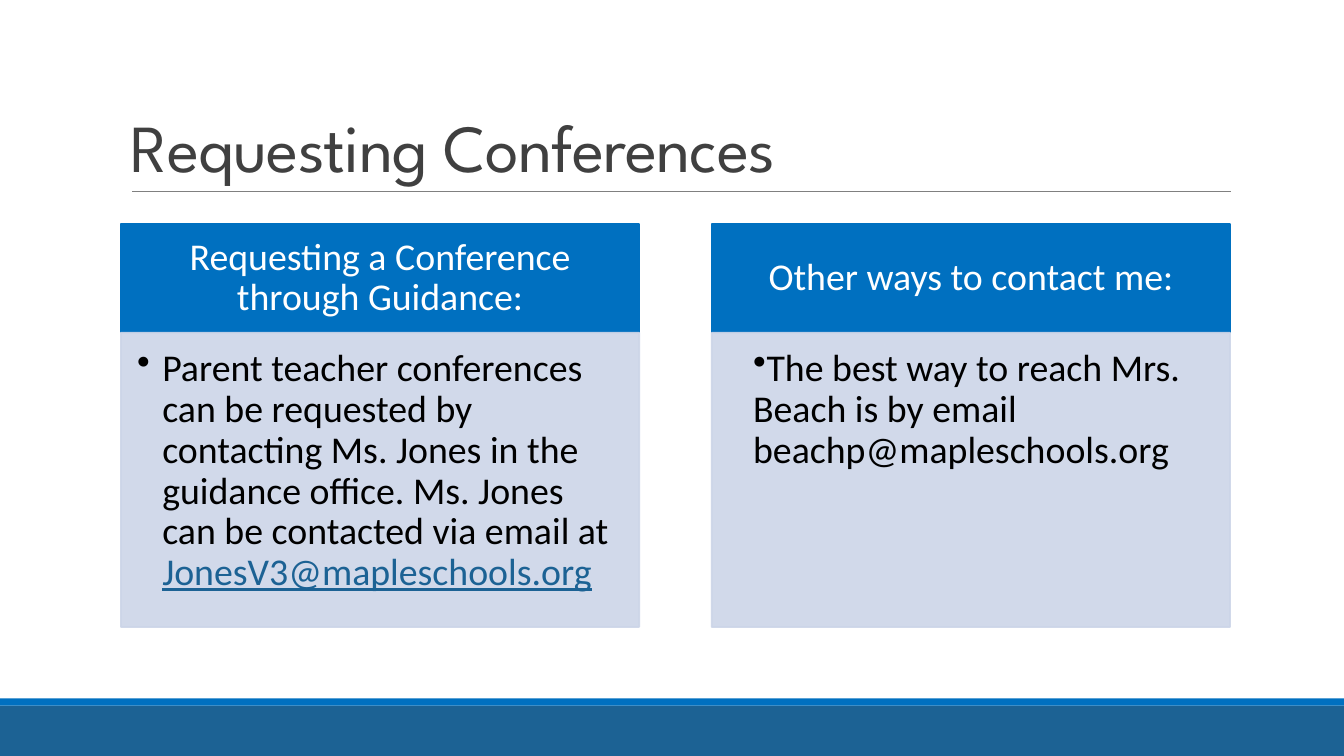
from lxml import etree
from pptx import Presentation
from pptx import util as u
from pptx.dml.color import RGBColor
from pptx.enum import shapes, text
from pptx.oxml.ns import qn

Inches, Pt = u.Inches, u.Pt
COLORS = {
    "band": "1C6294", "accent": "0070C0", "panel": "CCD5E8", "rule": "808080",
    "title": "404040", "white": "FFFFFF", "black": "000000",
}


def add_box(left, top, width, height, color, outlined=False, opacity=None):
    shape = slide.shapes.add_shape(
        shapes.MSO_SHAPE.RECTANGLE, Inches(left), Inches(top), Inches(width), Inches(height))
    shape.shadow.inherit = False
    shape.fill.solid()
    shape.fill.fore_color.rgb = RGBColor.from_string(COLORS[color])
    if outlined:
        shape.line.color.rgb = RGBColor.from_string(COLORS[color])
        shape.line.width = Pt(1.25)
    else:
        shape.line.fill.background()
    if opacity:
        for color_element in shape._element.spPr.iter(qn("a:srgbClr")):
            etree.SubElement(color_element, qn("a:alpha"), val=str(opacity * 1000))
    return shape


def write_text(shape, runs, *, size=27, font="Calibri", align=text.PP_ALIGN.LEFT,
               anchor=text.MSO_ANCHOR.TOP, insets=(0.1, 0.05, 0.1, 0.05),
               line_spacing=0.9, space_after=0, tracking=None, bullet_indent=None):
    """Fill a shape with one paragraph; runs are (words, color, underlined)."""
    frame = shape.text_frame
    frame.word_wrap = True
    frame.vertical_anchor = anchor
    (frame.margin_left, frame.margin_top,
     frame.margin_right, frame.margin_bottom) = map(Inches, insets)
    paragraph = frame.paragraphs[0]
    paragraph.alignment = align
    paragraph.line_spacing = line_spacing
    paragraph.space_after = Pt(space_after)
    if bullet_indent is not None:
        properties = paragraph._p.get_or_add_pPr()
        properties.set("marL", str(Inches(0.25)))
        properties.set("indent", str(Inches(bullet_indent)))
        etree.SubElement(properties, qn("a:buChar"), char="•")
    for words, color, underlined in runs:
        run = paragraph.add_run()
        run.text = words
        run.font.size = Pt(size)
        run.font.name = font
        run.font.color.rgb = RGBColor.from_string(COLORS[color])
        if underlined:
            run.font.underline = True
        if tracking:
            run._r.get_or_add_rPr().set("spc", str(int(tracking * 100)))


presentation = Presentation()
presentation.slide_width, presentation.slide_height = Inches(13.33), Inches(7.5)
slide = presentation.slides.add_slide(presentation.slide_layouts[6])

# Footer bands
add_box(0, 7, 13.33, 0.5, "band")
add_box(0, 6.93, 13.33, 0.07, "accent")

# Title and the rule below it
rule = slide.shapes.add_connector(
    shapes.MSO_CONNECTOR.STRAIGHT, Inches(1.31), Inches(1.9), Inches(12.21), Inches(1.9))
rule.line.color.rgb = RGBColor.from_string(COLORS["rule"])
rule.line.width = Pt(0.5)
etree.SubElement(rule._element.spPr, qn("a:effectLst"))

title = slide.shapes.add_textbox(Inches(1.2), Inches(0.31), Inches(11), Inches(1.59))
write_text(title, [("Requesting Conferences", "title", False)], size=48,
           font="League Spartan", anchor=text.MSO_ANCHOR.BOTTOM,
           line_spacing=0.85, tracking=-0.5)

# Two columns: left edge, heading, bullet indent, body runs
columns = [
    (1.2, "Requesting a Conference through Guidance:", -0.25, [
        ("Parent teacher conferences can be requested by contacting Ms. Jones in the "
         "guidance office. Ms. Jones can be contacted via email at ", "black", False),
        ("JonesV3@mapleschools.org", "band", True)]),
    (7.06, "Other ways to contact me:", 0, [
        ("The best way to reach Mrs. Beach is by email beachp@mapleschools.org",
         "black", False)]),
]
for left, heading, bullet_indent, body in columns:
    header = add_box(left, 2.22, 5.14, 1.08, "accent", outlined=True)
    write_text(header, [(heading, "white", False)], align=text.PP_ALIGN.CENTER,
               anchor=text.MSO_ANCHOR.MIDDLE, insets=(0.21, 0.12, 0.21, 0.12))
    panel = add_box(left, 3.3, 5.14, 2.92, "panel", outlined=True, opacity=90)
    write_text(panel, body, insets=(0.16, 0.16, 0.21, 0.24), bullet_indent=bullet_indent)

presentation.save("out.pptx")
